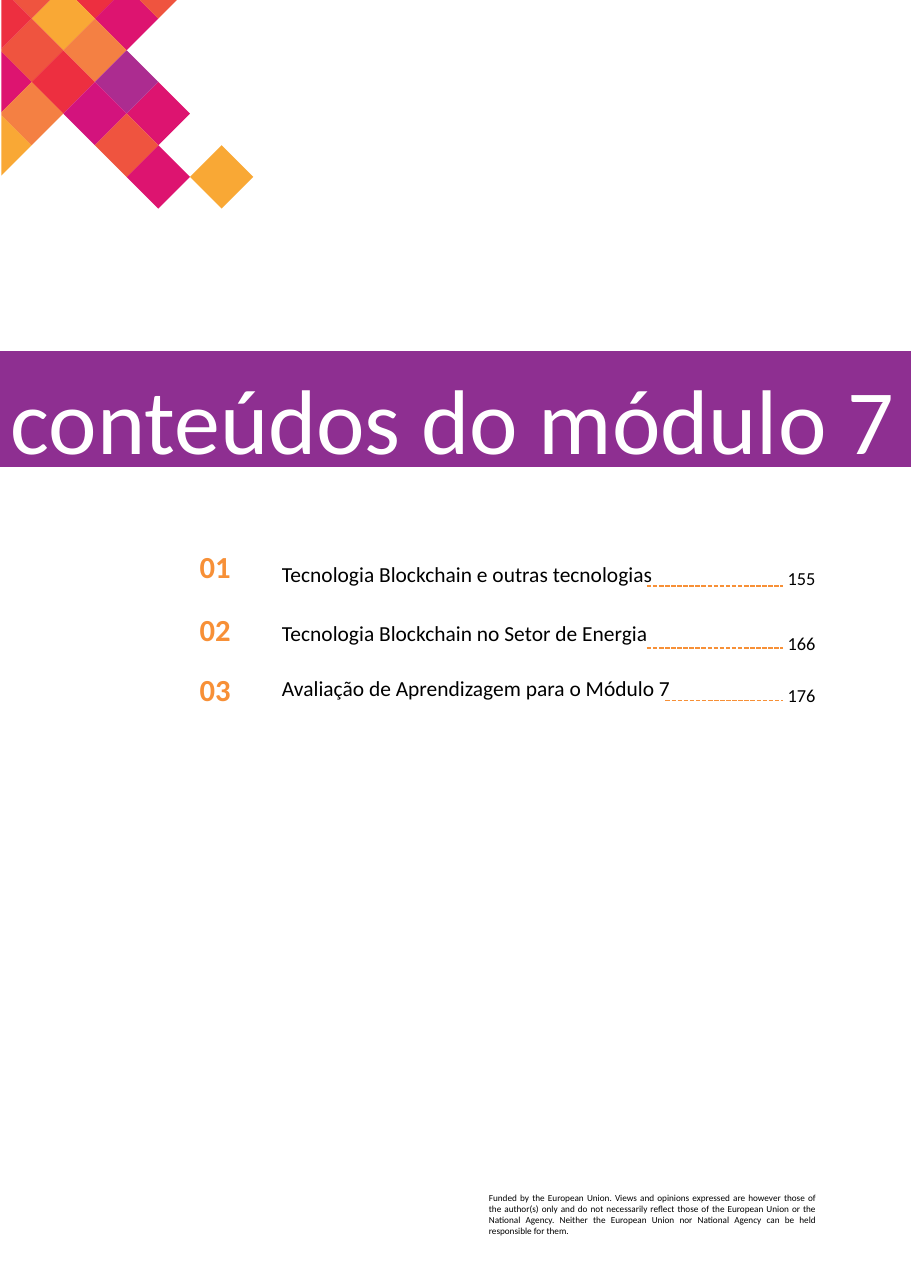
from pptx import Presentation
from pptx.dml.color import RGBColor
from pptx.enum.dml import MSO_LINE
from pptx.enum.shapes import MSO_CONNECTOR, MSO_SHAPE
from pptx.enum.text import MSO_ANCHOR, PP_ALIGN
from pptx.oxml.ns import qn
from pptx.util import Cm, Pt

LEFT, CENTER, RIGHT, JUSTIFY = (
    PP_ALIGN.LEFT, PP_ALIGN.CENTER, PP_ALIGN.RIGHT, PP_ALIGN.JUSTIFY)
TOP, MIDDLE = MSO_ANCHOR.TOP, MSO_ANCHOR.MIDDLE
RECTANGLE = MSO_SHAPE.RECTANGLE
STRAIGHT = MSO_CONNECTOR.STRAIGHT
SYS_DASH = MSO_LINE.SQUARE_DOT

rgb = RGBColor.from_string
PURPLE, ORANGE, BLACK, WHITE = "8E2F91", "F79037", "000000", "FFFFFF"
RED, PINK, CORAL, AMBER, PEACH = "ED2F40", "DD1470", "EF543F", "F9A835", "F48043"
VIOLET, MAGENTA = "AC2C90", "D3137D"

prs = Presentation()
prs.slide_width, prs.slide_height = Cm(21), Cm(29.7)
s = prs.slides.add_slide(prs.slide_layouts[6])


def add_text(text, x, y, w, h, size, color=BLACK, align=LEFT, anchor=MIDDLE, bold=False):
    tf = s.shapes.add_textbox(Cm(x), Cm(y), Cm(w), Cm(h)).text_frame
    tf.word_wrap = True
    tf.vertical_anchor = anchor
    p = tf.paragraphs[0]
    p.text = text
    p.alignment = align
    font = p.runs[0].font
    font.name, font.size, font.bold = "Calibri", Pt(size), bold
    font.color.rgb = rgb(color)


def clip(points, axis, limit):
    """Cut off the part of a polygon that lies below limit on one axis."""
    kept = []
    for a, b in zip(points, points[1:] + points[:1]):
        if a[axis] >= limit:
            kept.append(a)
        if (a[axis] < limit) != (b[axis] < limit):
            t = (limit - a[axis]) / (b[axis] - a[axis])
            kept.append(tuple(m + t * (n - m) for m, n in zip(a, b)))
    return kept


# Title band
band = s.shapes.add_shape(RECTANGLE, 0, Cm(8.1), prs.slide_width, Cm(2.67))
band.shadow.inherit = False
band.fill.solid()
band.fill.fore_color.rgb = rgb(PURPLE)
band.line.fill.background()

# Corner mosaic: diamonds on a grid, cut at the page edges
HALF = 0.73
ROW_0 = 0.43
diamonds = [
    (3, -1, RED), (4, 0, PINK), (5, -1, CORAL), (2, 0, AMBER), (1, 1, CORAL),
    (2, 2, RED), (3, 1, PEACH), (0, 2, PINK), (0, 4, AMBER), (1, 3, PEACH),
    (7, 5, AMBER), (5, 5, PINK), (5, 3, PINK), (4, 2, VIOLET), (3, 3, MAGENTA),
    (4, 4, CORAL), (1, -1, CORAL), (0, 0, RED),
]
for col, row, color in diamonds:
    x, y = col * HALF, ROW_0 + row * HALF
    points = [(x, y - HALF), (x + HALF, y), (x, y + HALF), (x - HALF, y)]
    points = clip(clip(points, 0, 0.03), 1, 0)
    points = [(Cm(px), Cm(py)) for px, py in points]
    builder = s.shapes.build_freeform(*points[0])
    builder.add_line_segments(points[1:])
    sp = builder.convert_to_shape()
    sp.shadow.inherit = False
    sp.fill.solid()
    sp.fill.fore_color.rgb = rgb(color)
    sp.line.fill.background()

# Contents: number, topic, page, then their tops and the leader's start and height
contents = [
    ("01", "Tecnologia Blockchain e outras tecnologias", "155",
     12.57, 12.75, 12.85, 14.91, 13.51),
    ("02", "Tecnologia Blockchain no Setor de Energia", "166",
     14.02, 14.1, 14.35, 14.91, 14.94),
    ("03", "Avaliação de Aprendizagem para o Módulo 7", "176",
     15.42, 15.39, 15.54, 15.34, 16.15),
]
for number, topic, page, number_y, topic_y, page_y, leader_x, leader_y in contents:
    add_text(number, 4.06, number_y, 1.8, 0.97, 20, ORANGE, CENTER, bold=True)
    add_text(topic, 6.25, topic_y, 11, 0.97, 14)
    add_text(page, 17.78, page_y, 1.27, 0.97, 12, align=RIGHT)
    leader = s.shapes.add_connector(
        STRAIGHT, Cm(leader_x), Cm(leader_y), Cm(18.04), Cm(leader_y))
    leader.line.color.rgb = rgb(ORANGE)
    leader.line.width = Pt(1)
    leader.line.dash_style = SYS_DASH
    sp_pr = leader._element.spPr
    sp_pr.append(sp_pr.makeelement(qn("a:effectLst"), {}))

add_text("conteúdos do módulo 7", 0, 8.23, 21, 2.69, 60, WHITE, anchor=TOP)
add_text(
    "Funded by the European Union. Views and opinions expressed are however those of "
    "the author(s) only and do not necessarily reflect those of the European Union or "
    "the National Agency. Neither the European Union nor National Agency can be held "
    "responsible for them.",
    11.02, 27.36, 8.03, 1.27, 6, align=JUSTIFY, anchor=TOP)

prs.save("out.pptx")
